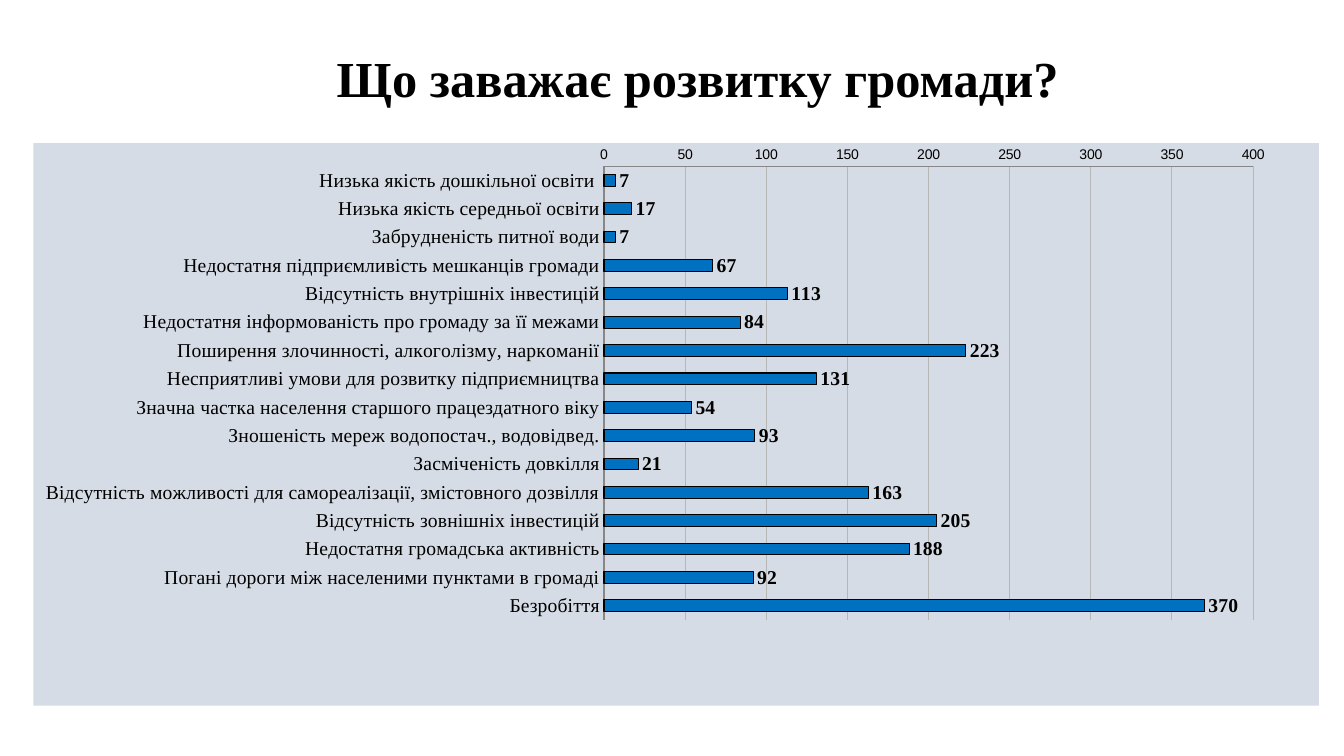
from dataclasses import dataclass
from typing import Any, NamedTuple

from pptx import Presentation
from pptx.chart.chart import Chart
from pptx.chart.data import CategoryChartData
from pptx.dml.color import RGBColor
from pptx.enum.chart import XL_AXIS_CROSSES as Crosses
from pptx.enum.chart import XL_CHART_TYPE as ChartType
from pptx.enum.chart import XL_LABEL_POSITION as LabelPosition
from pptx.enum.chart import XL_TICK_MARK as TickMark
from pptx.enum.text import PP_ALIGN as Align
from pptx.oxml import parse_xml
from pptx.oxml.ns import nsdecls, qn
from pptx.slide import Slide
from pptx.util import Emu, Pt

PX = 9144  # EMU in one px, 100 px to the inch


@dataclass(frozen=True)
class Theme:
    ink: str = "000000"
    bar: str = "0070C0"
    panel: str = "D6DCE5"
    grid: str = "B7B7B7"
    axis: str = "878787"
    serif: str = "Times New Roman"
    sans: str = "Arial"
    base: str = "Calibri"
    title_size: int = 36
    label_size: int = 14
    scale_size: int = 10
    hairline: float = 0.75


class Box(NamedTuple):
    left: int
    top: int
    width: int
    height: int

    def emu(self) -> list[Emu]:
        return [Emu(length * PX) for length in self]


class Obstacle(NamedTuple):
    name: str
    votes: int


THEME = Theme()
TITLE_BOX = Box(317, 42, 750, 74)
CHART_BOX = Box(33, 142, 1275, 558)
PLOT_LAYOUT = {"x": 0.444, "y": 0.041, "w": 0.505, "h": 0.807}  # shares of the chart

OBSTACLES = [
    Obstacle("Низька якість дошкільної освіти ", 7),
    Obstacle("Низька якість середньої освіти", 17),
    Obstacle("Забрудненість питної води", 7),
    Obstacle("Недостатня підприємливість мешканців громади", 67),
    Obstacle("Відсутність внутрішніх інвестицій", 113),
    Obstacle("Недостатня інформованість про громаду за її межами", 84),
    Obstacle("Поширення злочинності, алкоголізму, наркоманії", 223),
    Obstacle("Несприятливі умови для розвитку підприємництва", 131),
    Obstacle("Значна частка населення старшого працездатного віку", 54),
    Obstacle("Зношеність мереж водопостач., водовідвед.", 93),
    Obstacle("Засміченість довкілля", 21),
    Obstacle("Відсутність можливості для самореалізації, змістовного дозвілля", 163),
    Obstacle("Відсутність зовнішніх інвестицій", 205),
    Obstacle("Недостатня громадська активність", 188),
    Obstacle("Погані дороги між населеними пунктами в громаді", 92),
    Obstacle("Безробіття", 370),
]


def apply(target: Any, values: dict[str, Any]) -> None:
    for name, value in values.items():
        setattr(target, name, value)


def style_font(font: Any, name: str, size: int, bold: bool = False) -> None:
    apply(font, {"name": name, "size": Pt(size), "bold": bold})
    font.color.rgb = RGBColor.from_string(THEME.ink)


def style_line(line: Any, color: str) -> None:
    line.color.rgb = RGBColor.from_string(color)
    line.width = Pt(THEME.hairline)


def add_title(slide: Slide, text: str) -> None:
    frame = slide.shapes.add_textbox(*TITLE_BOX.emu()).text_frame
    frame.word_wrap = False
    paragraph = frame.paragraphs[0]
    apply(paragraph, {"text": text, "alignment": Align.CENTER})
    style_font(paragraph.runs[0].font, THEME.serif, THEME.title_size, bold=True)


def set_panel_and_layout(chart: Chart) -> None:
    chart_space = chart._chartSpace
    panel = parse_xml(
        f'<c:spPr {nsdecls("c", "a")}><a:solidFill><a:srgbClr val="{THEME.panel}"/>'
        "</a:solidFill><a:ln><a:noFill/></a:ln></c:spPr>"
    )
    chart_space.find(qn("c:chart")).addnext(panel)

    plot_area = chart_space.find(".//" + qn("c:plotArea"))
    for layout in plot_area.findall(qn("c:layout")):
        plot_area.remove(layout)
    modes = "".join(f'<c:{side}Mode val="edge"/>' for side in "xy")
    shares = "".join(f'<c:{side} val="{share}"/>' for side, share in PLOT_LAYOUT.items())
    plot_area.insert(0, parse_xml(
        f'<c:layout {nsdecls("c")}><c:manualLayout><c:layoutTarget val="inner"/>'
        f"{modes}{shares}</c:manualLayout></c:layout>"
    ))


def style_axes(chart: Chart) -> None:
    shared = {"has_title": False, "major_tick_mark": TickMark.NONE,
              "minor_tick_mark": TickMark.NONE}
    names, votes = chart.category_axis, chart.value_axis
    apply(names, shared | {"reverse_order": True, "crosses": Crosses.MAXIMUM,
                           "has_major_gridlines": False})
    apply(votes, shared | {"minimum_scale": 0, "maximum_scale": 400, "major_unit": 50,
                           "has_major_gridlines": True})
    style_font(names.tick_labels.font, THEME.serif, THEME.label_size)
    style_font(votes.tick_labels.font, THEME.sans, THEME.scale_size)
    for axis in (names, votes):
        style_line(axis.format.line, THEME.axis)
    style_line(votes.major_gridlines.format.line, THEME.grid)


def add_obstacle_chart(slide: Slide, obstacles: list[Obstacle]) -> None:
    data = CategoryChartData(number_format="General")
    data.categories = [obstacle.name for obstacle in obstacles]
    data.add_series("Series 1", [obstacle.votes for obstacle in obstacles])
    chart = slide.shapes.add_chart(ChartType.BAR_CLUSTERED, *CHART_BOX.emu(), data).chart
    apply(chart, {"has_title": False, "has_legend": False})
    style_font(chart.font, THEME.base, THEME.scale_size)
    set_panel_and_layout(chart)
    style_axes(chart)

    # Bars and their values
    plot = chart.plots[0]
    apply(plot, {"vary_by_categories": False, "gap_width": 140})
    series = plot.series[0]
    series.format.fill.solid()
    series.format.fill.fore_color.rgb = RGBColor.from_string(THEME.bar)
    style_line(series.format.line, THEME.ink)
    labels = series.data_labels
    apply(labels, {"show_value": True, "position": LabelPosition.OUTSIDE_END})
    style_font(labels.font, THEME.serif, THEME.label_size, bold=True)


def main() -> None:
    presentation = Presentation()
    apply(presentation, {"slide_width": Emu(1333 * PX), "slide_height": Emu(750 * PX)})
    slide = presentation.slides.add_slide(presentation.slide_layouts[6])
    add_title(slide, "Що заважає розвитку громади?")
    add_obstacle_chart(slide, OBSTACLES)
    presentation.save("out.pptx")


if __name__ == "__main__":
    main()
